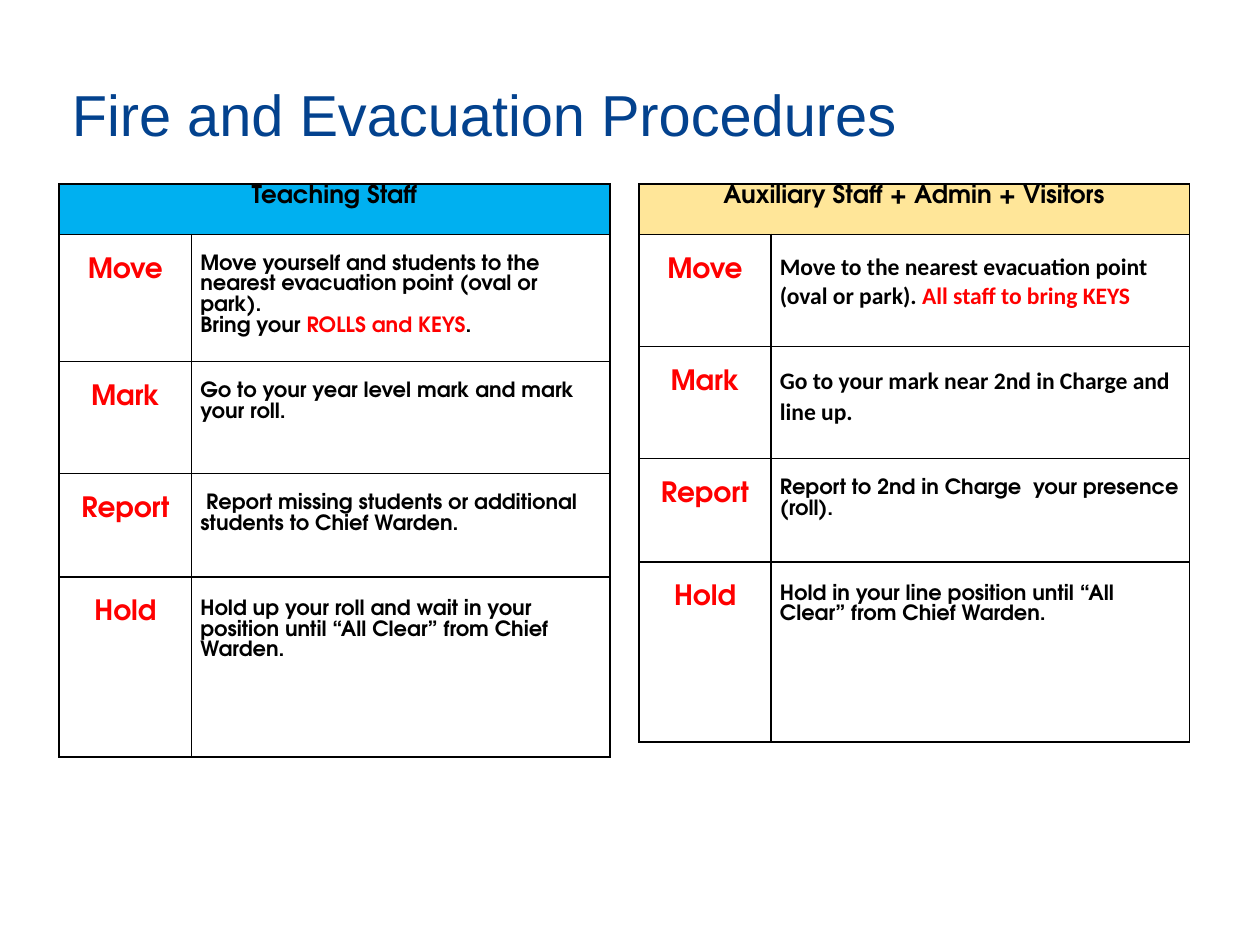
from lxml.etree import SubElement
from pptx import Presentation
from pptx.dml.color import RGBColor
from pptx.enum.text import MSO_ANCHOR as Anchor, PP_ALIGN as Align
from pptx.oxml.ns import qn
from pptx.util import Inches, Pt

BLACK, RED, NAVY = "000000", "FF0000", "03428E"
BODY_FONT, ALT_FONT, TITLE_FONT = "TeX Gyre Adventor", "Calibri", "Arial"


def color(hex_code):
    return RGBColor.from_string(hex_code)


class ProcedureSlide:
    """Holds the table style and the slide being filled."""

    columns = (1.05, 3.32)
    side_margin = 0.07
    line_spacing = 1.07

    def __init__(self, slide):
        self.slide = slide

    def add_run(self, paragraph, text, size, hex_code, font=BODY_FONT, bold=True):
        run = paragraph.add_run()
        run.text = text
        run.font.size = Pt(size)
        run.font.name = font
        run.font.bold = bold
        run.font.color.rgb = color(hex_code)

    def add_title(self, text):
        title = self.slide.shapes.title
        title.left, title.top = Inches(0.47), Inches(0.31)
        title.width, title.height = Inches(8.62), Inches(1.25)
        title.text_frame.vertical_anchor = Anchor.MIDDLE
        paragraph = title.text_frame.paragraphs[0]
        paragraph.alignment = Align.LEFT
        paragraph.line_spacing = 0.9
        self.add_run(paragraph, text, 33, NAVY, TITLE_FONT, bold=False)

    def style_cell(self, cell, top_margin=0, fill=None):
        cell.margin_left = cell.margin_right = Inches(self.side_margin)
        cell.margin_top, cell.margin_bottom = Inches(top_margin), 0
        cell.vertical_anchor = Anchor.TOP
        properties = cell._tc.get_or_add_tcPr()
        for side in ("a:lnL", "a:lnR", "a:lnT", "a:lnB"):
            border = SubElement(properties, qn(side), w=str(Pt(1)))
            solid = SubElement(border, qn("a:solidFill"))
            SubElement(solid, qn("a:srgbClr"), val=BLACK)
        if fill:
            cell.fill.solid()
            cell.fill.fore_color.rgb = color(fill)
        else:
            cell.fill.background()

    def fill_text(self, cell, paragraphs, size, font=BODY_FONT, align=Align.LEFT,
                  spacing=line_spacing):
        """Each paragraph is a list of (text, colour) pairs."""
        frame = cell.text_frame
        for index, runs in enumerate(paragraphs):
            paragraph = frame.add_paragraph() if index else frame.paragraphs[0]
            paragraph.alignment = align
            paragraph.line_spacing = spacing
            for text, hex_code in runs:
                self.add_run(paragraph, text, size, hex_code, font)

    def add_procedure(self, left, heading, fill, heights, steps):
        frame = self.slide.shapes.add_table(
            len(heights), len(self.columns), Inches(left), Inches(1.46),
            Inches(sum(self.columns)), Inches(sum(heights)))
        table = frame.table
        table.first_row = table.horz_banding = False
        for column, width in zip(table.columns, self.columns):
            column.width = Inches(width)
        for row, height in zip(table.rows, heights):
            row.height = Inches(height)

        header, header_end = table.rows[0].cells
        header.merge(header_end)
        for cell in (header, header_end):
            self.style_cell(cell, fill=fill)
        self.fill_text(header, [[(heading, BLACK)]], 14, align=Align.CENTER)

        for index, (step, paragraphs, options) in enumerate(steps, start=1):
            label, instruction = table.rows[index].cells
            self.style_cell(label, 0.17)
            self.fill_text(label, [[(step, RED)]], 16, align=Align.CENTER)
            self.style_cell(instruction, 0.17 if step == "Hold" else 0.15)
            self.fill_text(instruction, paragraphs, **{"size": 12, **options})


TEACHING_STEPS = [
    ("Move", [
        [("Move yourself and students to the nearest evacuation point (oval or park).", BLACK)],
        [("Bring your ", BLACK), ("ROLLS and KEYS", RED), (".", BLACK)],
    ], {}),
    ("Mark", [[("Go to your year level mark and mark your roll.", BLACK)]], {}),
    ("Report", [[(" Report missing students or additional students to Chief Warden.", BLACK)]], {}),
    ("Hold", [[("Hold up your roll and wait in your position until “All Clear” from Chief Warden.",
                BLACK)]], {}),
]
AUXILIARY_STEPS = [
    ("Move", [[("Move to the nearest evacuation point (oval or park). ", BLACK),
               ("All staff to bring KEYS", RED)]],
     {"size": 13.5, "font": ALT_FONT, "spacing": 1.0}),
    ("Mark", [[("Go to your mark near 2nd in Charge and line up.", BLACK)]],
     {"size": 13.5, "font": ALT_FONT}),
    ("Report", [[("Report to 2nd in Charge  your presence (roll).", BLACK)]], {}),
    ("Hold", [[("Hold in your line position until “All Clear” from Chief Warden.", BLACK)]], {}),
]


def main():
    deck = Presentation()
    deck.slide_width, deck.slide_height = Inches(10), Inches(7.5)
    page = ProcedureSlide(deck.slides.add_slide(deck.slide_layouts[5]))
    page.add_title("Fire and Evacuation Procedures")
    page.add_procedure(0.47, "Teaching Staff", "00B0F0",
                       (0.4, 1.01, 0.89, 0.82, 1.43), TEACHING_STEPS)
    page.add_procedure(5.07, "Auxiliary Staff + Admin + Visitors", "FFE699",
                       (0.4, 0.89, 0.89, 0.82, 1.43), AUXILIARY_STEPS)
    deck.save("out.pptx")


if __name__ == "__main__":
    main()
